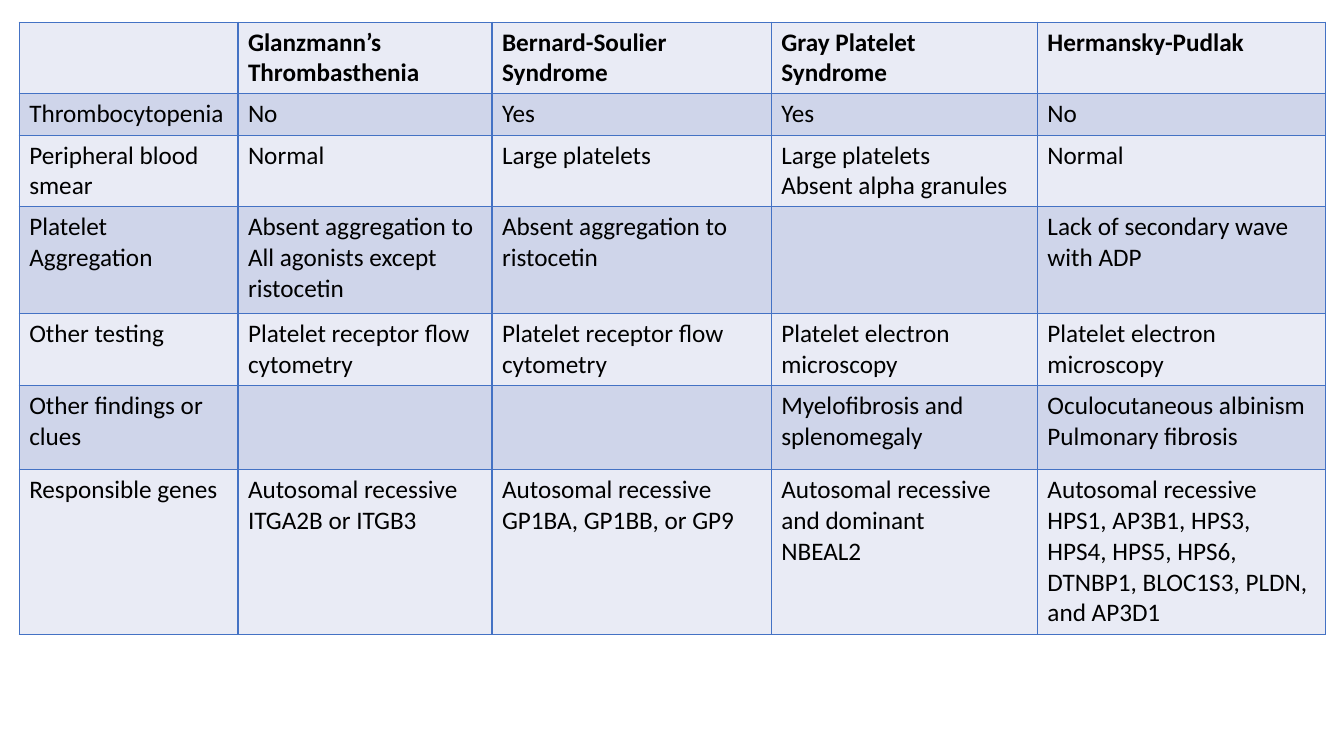
from lxml import etree
from pptx import Presentation
from pptx import util as u
from pptx.dml.color import RGBColor
from pptx.oxml import ns


def paint(fill, color):
    fill.solid()
    fill.fore_color.rgb = RGBColor.from_string(color)


def border(cell, color, width):
    props = cell._tc.get_or_add_tcPr()
    for side in ("lnL", "lnR", "lnT", "lnB"):
        line = etree.SubElement(props, ns.qn("a:" + side), w=str(u.Pt(width)))
        solid = etree.SubElement(line, ns.qn("a:solidFill"))
        etree.SubElement(solid, ns.qn("a:srgbClr"), val=color)


# Each line break inside a cell starts a new paragraph
rows = [
    ["", "Glanzmann’s Thrombasthenia", "Bernard-Soulier Syndrome",
     "Gray Platelet Syndrome", "Hermansky-Pudlak"],
    ["Thrombocytopenia", "No", "Yes", "Yes", "No"],
    ["Peripheral blood smear", "Normal", "Large platelets",
     "Large platelets\nAbsent alpha granules", "Normal"],
    ["Platelet Aggregation",
     "Absent aggregation to\nAll agonists except ristocetin",
     "Absent aggregation to\nristocetin", "",
     "Lack of secondary wave with ADP"],
    ["Other testing", "Platelet receptor flow cytometry",
     "Platelet receptor flow cytometry", "Platelet electron microscopy",
     "Platelet electron microscopy"],
    ["Other findings or clues", "", "", "Myelofibrosis and splenomegaly",
     "Oculocutaneous albinism\nPulmonary fibrosis"],
    ["Responsible genes", "Autosomal recessive\nITGA2B or ITGB3",
     "Autosomal recessive\nGP1BA, GP1BB, or GP9",
     "Autosomal recessive and dominant\nNBEAL2",
     "Autosomal recessive\nHPS1, AP3B1, HPS3, HPS4, HPS5, HPS6, "
     "DTNBP1, BLOC1S3, PLDN, and AP3D1"],
]
widths = [2.17, 2.52, 2.77, 2.64, 2.86]
heights = [0.71, 0.41, 0.71, 1.06, 0.71, 0.84, 1.63]
bands = ["E9EBF5", "CFD5EA"]

# Slide
deck = Presentation()
deck.slide_width, deck.slide_height = u.Inches(13.33), u.Inches(7.5)
slide = deck.slides.add_slide(deck.slide_layouts[6])

# Table grid
table = slide.shapes.add_table(
    len(rows), len(widths), u.Inches(0.19), u.Inches(0.22),
    u.Inches(sum(widths)), u.Inches(sum(heights))).table
for col, width in zip(table.columns, widths):
    col.width = u.Inches(width)
for row, height in zip(table.rows, heights):
    row.height = u.Inches(height)

# Cells: alternating bands, bold header row
for r, row in enumerate(rows):
    for c, words in enumerate(row):
        cell = table.cell(r, c)
        border(cell, "4472C4", 1)
        paint(cell.fill, bands[r % 2])
        frame = cell.text_frame
        for i, line in enumerate(words.split("\n") if words else []):
            para = frame.add_paragraph() if i else frame.paragraphs[0]
            run = para.add_run()
            run.text = line
            font = run.font
            font.name, font.size, font.bold = "Calibri", u.Pt(18), r == 0
            paint(font.fill, "000000")

deck.save("out.pptx")
